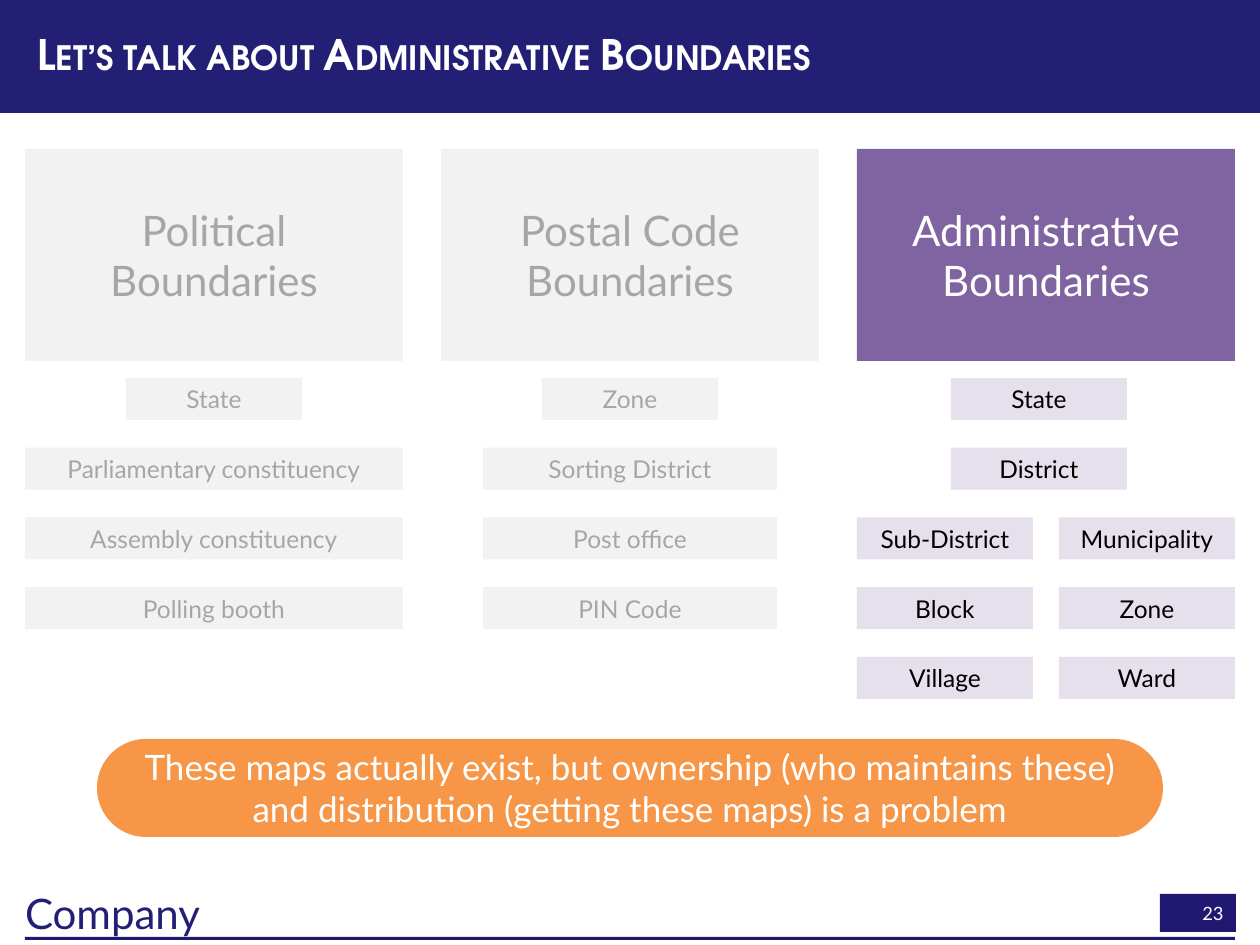
from dataclasses import dataclass

from pptx import Presentation
from pptx import util as u
from pptx.dml.color import RGBColor
from pptx.enum import shapes, text

# Content: each level is a row of one or two units
TITLE = "Let’s talk about Administrative Boundaries"
COLUMNS = [
    dict(heading="Political Boundaries", active=False, shift=0,
         levels=[(176, ["State"]), (378, ["Parliamentary constituency"]),
                 (378, ["Assembly constituency"]), (378, ["Polling booth"])]),
    dict(heading="Postal Code Boundaries", active=False, shift=0,
         levels=[(176, ["Zone"]), (294, ["Sorting District"]),
                 (294, ["Post office"]), (294, ["PIN Code"])]),
    dict(heading="Administrative Boundaries", active=True, shift=-7,
         levels=[(176, ["State"]), (176, ["District"]),
                 (176, ["Sub-District", "Municipality"]),
                 (176, ["Block", "Zone"]), (176, ["Village", "Ward"])]),
]
MESSAGE = ("These maps actually exist, but ownership (who maintains these) "
           "and distribution (getting these maps) is a problem")
BRAND = "Company"
PAGE = "23"


@dataclass(frozen=True)
class Theme:
    body: str = "Lato"
    display: str = "TeX Gyre Adventor"
    navy: str = "231F74"
    page_fill: str = "211971"
    rule: str = "20186F"
    white: str = "FFFFFF"
    black: str = "000000"
    muted_fill: str = "F2F2F2"
    muted_text: str = "A6A6A6"
    purple: str = "8064A2"
    lilac: str = "E6E0EC"
    orange: str = "F79646"
    large: float = 24
    message: float = 20
    level: float = 14
    page: float = 10.5


THEME = Theme()
PX = 914400 / 126
WIDTH, HEIGHT = 1260, 945
MARGIN, COLUMN_W, COLUMN_GAP = 25, 378, 38
HEADING_TOP, HEADING_H = 149, 212
LEVEL_TOP, LAST_LEVEL_TOP, LEVEL_H = 378, 657, 42
LEVEL_PITCH = (LAST_LEVEL_TOP - LEVEL_TOP) / 4

deck = Presentation()
deck.slide_width, deck.slide_height = (u.Emu(round(n * PX)) for n in (WIDTH, HEIGHT))
slide = deck.slides.add_slide(deck.slide_layouts[6])


def emu(box):
    return [u.Emu(round(n * PX)) for n in box]


def write(shape, words, size, color, align=text.PP_ALIGN.CENTER, font=THEME.body):
    frame = shape.text_frame
    frame.word_wrap = True
    frame.vertical_anchor = text.MSO_ANCHOR.MIDDLE
    frame.text = words
    line = frame.paragraphs[0]
    line.alignment = align
    run = line.runs[0]
    run.font.name, run.font.size = font, u.Pt(size)
    run.font.color.rgb = RGBColor.from_string(color)
    return line


def block(box, fill, kind=shapes.MSO_SHAPE.RECTANGLE):
    shape = slide.shapes.add_shape(kind, *emu(box))
    shape.shadow.inherit = False
    shape.fill.solid()
    shape.fill.fore_color.rgb = RGBColor.from_string(fill)
    shape.line.fill.background()
    return shape


# Footer
page = block((1160, 894, 76, 38), THEME.page_fill)
write(page, PAGE, THEME.page, THEME.white, text.PP_ALIGN.RIGHT)
block((MARGIN, 937, 1210, 3), THEME.rule)
brand = slide.shapes.add_textbox(*emu((MARGIN, 887, 223, 51)))
write(brand, BRAND, THEME.large, THEME.navy, text.PP_ALIGN.LEFT)
frame = brand.text_frame
frame.margin_left = frame.margin_right = frame.margin_top = frame.margin_bottom = 0

# Title bar
block((0, 0, WIDTH, 113), THEME.navy)
title = slide.shapes.add_textbox(*emu((MARGIN, 13, 1210, 88)))
title_line = write(title, TITLE, THEME.large, THEME.white,
                   text.PP_ALIGN.LEFT, THEME.display)
title_line.line_spacing = 0.9
title_font = title_line.runs[0].font
title_font.bold = True
title_font._element.set("cap", "small")

# Boundary columns
for c, column in enumerate(COLUMNS):
    left = MARGIN + c * (COLUMN_W + COLUMN_GAP)
    if column["active"]:
        heading_style = THEME.purple, THEME.white
        level_style = THEME.lilac, THEME.black
    else:
        heading_style = level_style = THEME.muted_fill, THEME.muted_text
    fill, color = heading_style
    heading = block((left, HEADING_TOP, COLUMN_W, HEADING_H), fill)
    write(heading, column["heading"], THEME.large, color)

    fill, color = level_style
    for r, (width, units) in enumerate(column["levels"]):
        top = LEVEL_TOP + r * LEVEL_PITCH
        if len(units) == 1:
            lefts = [left + (COLUMN_W - width) / 2 + column["shift"]]
        else:
            lefts = [left, left + COLUMN_W - width]
        for x, unit in zip(lefts, units):
            write(block((x, top, width, LEVEL_H), fill), unit, THEME.level, color)

# Closing message
message = block((97, 739, 1066, 98), THEME.orange, shapes.MSO_SHAPE.ROUNDED_RECTANGLE)
message.adjustments[0] = 0.5
write(message, MESSAGE, THEME.message, THEME.white)

deck.save("out.pptx")
